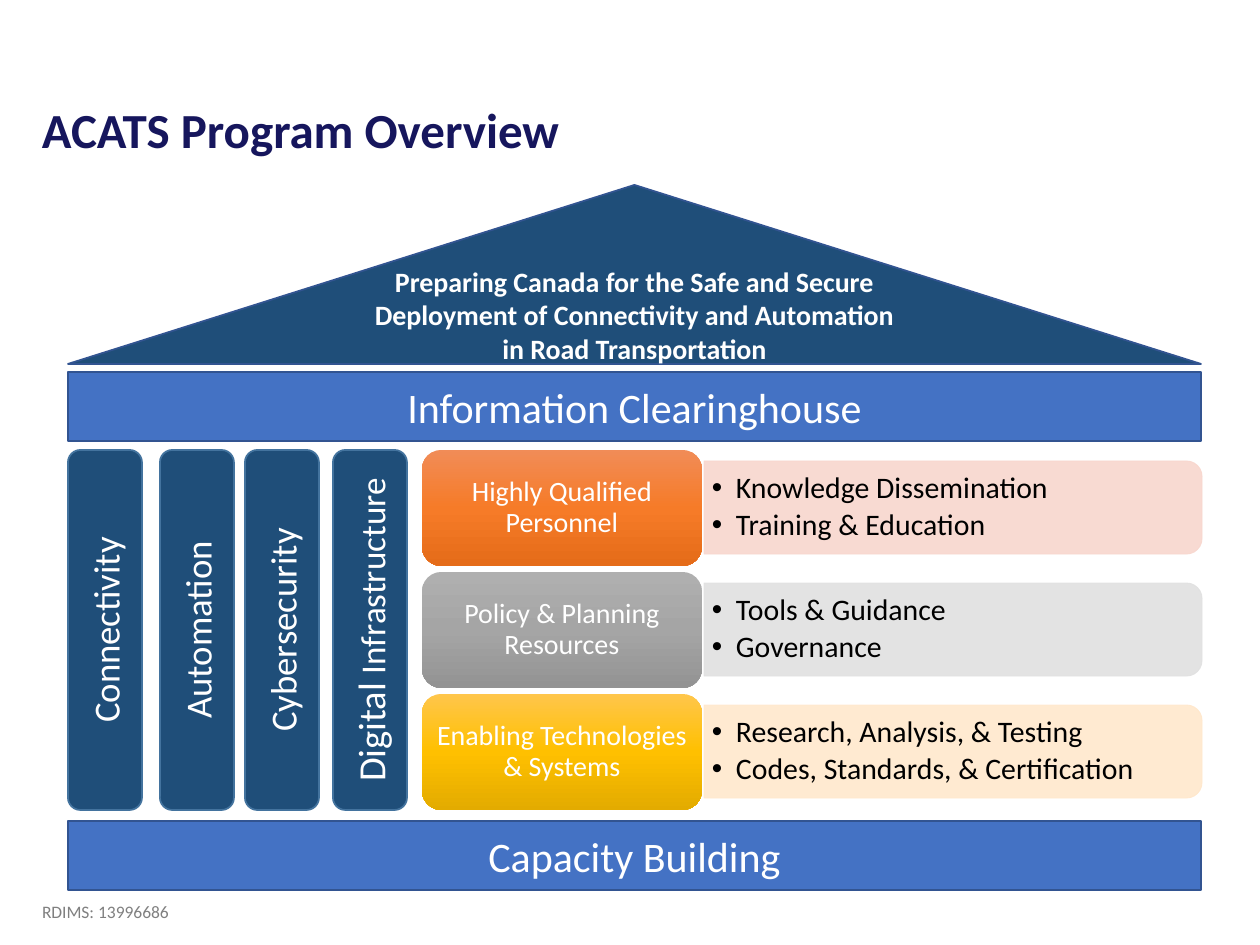
from copy import deepcopy
from lxml.etree import SubElement
from pptx import Presentation
from pptx.dml.color import RGBColor
from pptx.enum.shapes import MSO_SHAPE
from pptx.enum.text import MSO_ANCHOR, PP_ALIGN
from pptx.oxml.ns import qn
from pptx.util import Pt

SCALE = 914400 / 126
HUES = {
    "white": "FFFFFF", "black": "000000", "title": "16165D", "note": "808080",
    "navy": "1F4E79", "navy line": "43739E", "blue": "4472C4", "blue line": "325491",
}
PILLARS = [
    (68, [("Connectivity", 21)]),
    (160, [("Automation", 21)]),
    (245, [("Cybersecurity", 21)]),
    (333, [("Digital ", 22), ("Infrastructure", 20)]),
]
ROWS = [
    ("Highly Qualified Personnel", ["Knowledge Dissemination", "Training & Education"],
     ["F18C57", "F67B28", "E56C19"], "F8D7CE"),
    ("Policy & Planning Resources", ["Tools & Guidance", "Governance"],
     ["AFAFAF", "A5A5A5", "939393"], "E1E1E1"),
    ("Enabling Technologies & Systems",
     ["Research, Analysis, & Testing", "Codes, Standards, & Certification"],
     ["FFC64B", "FFC000", "E3AB00"], "FFE8CC"),
]


def px(num):
    return round(num * SCALE)


def tint(name):
    return RGBColor.from_string(HUES.get(name, name))


def put(frame, lines, size=16, hue="white", bold=False, align=PP_ALIGN.CENTER,
        anchor=MSO_ANCHOR.MIDDLE, pad=(13, 6, 13, 6), space=1.0, after=0,
        bullet=False, turn=None):
    """Fill a frame; each line is a string or a list of (text, size) runs."""
    frame.word_wrap = True
    frame.vertical_anchor = anchor
    (frame.margin_left, frame.margin_top,
     frame.margin_right, frame.margin_bottom) = map(px, pad)
    if turn:
        frame._txBody.bodyPr.set("vert", turn)
    for i, line in enumerate(lines):
        para = frame.add_paragraph() if i else frame.paragraphs[0]
        para.alignment = align
        para.line_spacing = space
        para.space_after = Pt(after)
        if bullet:
            props = para._p.get_or_add_pPr()
            props.set("marL", str(px(24)))
            props.set("indent", str(px(-24)))
            SubElement(props, qn("a:buFont"), typeface="Arial")
            SubElement(props, qn("a:buChar"), char="•")
        for text, points in [(line, size)] if isinstance(line, str) else line:
            run = para.add_run()
            run.text = text
            font = run.font
            font.name, font.size, font.bold = "Calibri", Pt(points), bold
            font.color.rgb = tint(hue)


class Sheet:
    def __init__(self, slide):
        self.slide = slide

    def text(self, box, lines, **style):
        frame = self.slide.shapes.add_textbox(*map(px, box)).text_frame
        put(frame, lines, **style)

    def shape(self, kind, box, fill, edge=None, width=1):
        shape = self.slide.shapes.add_shape(kind, *map(px, box))
        shape.shadow.inherit = False
        if fill:
            shape.fill.solid()
            shape.fill.fore_color.rgb = tint(fill)
        if edge:
            shape.line.color.rgb = tint(edge)
            shape.line.width = Pt(width)
        else:
            shape.line.fill.background()
        return shape

    def block(self, kind, box, lines, fill, edge, **style):
        put(self.shape(kind, box, fill, edge).text_frame, lines, **style)

    def card(self, box, text, stops):
        """Rounded box with a gradient that runs from top to bottom."""
        shape = self.shape(MSO_SHAPE.ROUNDED_RECTANGLE, box, None)
        shape.fill.gradient()
        shape.fill.gradient_angle = 270
        first = shape.fill.gradient_stops[0]._gs
        first.addnext(deepcopy(first))
        for i, (stop, hue) in enumerate(zip(shape.fill.gradient_stops, stops)):
            stop.position = i / 2
            stop.color.rgb = tint(hue)
        put(shape.text_frame, [text], pad=(9, 4, 9, 4), space=0.9)

    def band(self, box, hue):
        """Pale strip, rounded at its right end: a tall shape turned by 90."""
        left, top, wide, high = box
        shift = (wide - high) / 2
        shape = self.shape(MSO_SHAPE.ROUND_2_SAME_RECTANGLE,
                           (left + shift, top - shift, high, wide), hue, hue, 0.5)
        shape.rotation = 90
        for node in shape._element.spPr.iter(qn("a:srgbClr")):
            SubElement(node, qn("a:alpha"), val="90000")


def main():
    deck = Presentation()
    deck.slide_width, deck.slide_height = px(1260), px(945)
    sheet = Sheet(deck.slides.add_slide(deck.slide_layouts[6]))

    for i, (name, points, stops, pale) in enumerate(ROWS):
        top = 450 + 122 * i
        sheet.band((704, top + 11, 498, 93), pale)
        sheet.text((703, top + 16, 494, 83), points, size=17, hue="black",
                   align=PP_ALIGN.LEFT, pad=(9, 5, 9, 5), space=0.9,
                   after=2.5, bullet=True)
        sheet.card((422, top, 280, 116), name, stops)

    for top, name in [(372, "Information Clearinghouse"), (821, "Capacity Building")]:
        sheet.block(MSO_SHAPE.RECTANGLE, (68, top, 1133, 69), [name],
                    "blue", "blue line", size=24)

    for left, runs in PILLARS:
        sheet.block(MSO_SHAPE.ROUNDED_RECTANGLE, (left, 450, 74, 360), [runs],
                    "navy", "navy line", turn="vert270")

    sheet.block(MSO_SHAPE.ISOSCELES_TRIANGLE, (68, 185, 1133, 179),
                ["Preparing Canada for the Safe and Secure Deployment of "
                 "Connectivity and Automation in Road Transportation"],
                "navy", "blue line", bold=True, pad=(13, 6, 13, 15))

    sheet.text((29, 86, 1086, 94), ["ACATS Program Overview"], size=28,
               hue="title", bold=True, align=PP_ALIGN.LEFT, space=0.9)
    sheet.text((29, 895, 813, 32), ["RDIMS: 13996686"], size=10, hue="note",
               align=PP_ALIGN.LEFT, anchor=MSO_ANCHOR.TOP)
    deck.save("out.pptx")


if __name__ == "__main__":
    main()
